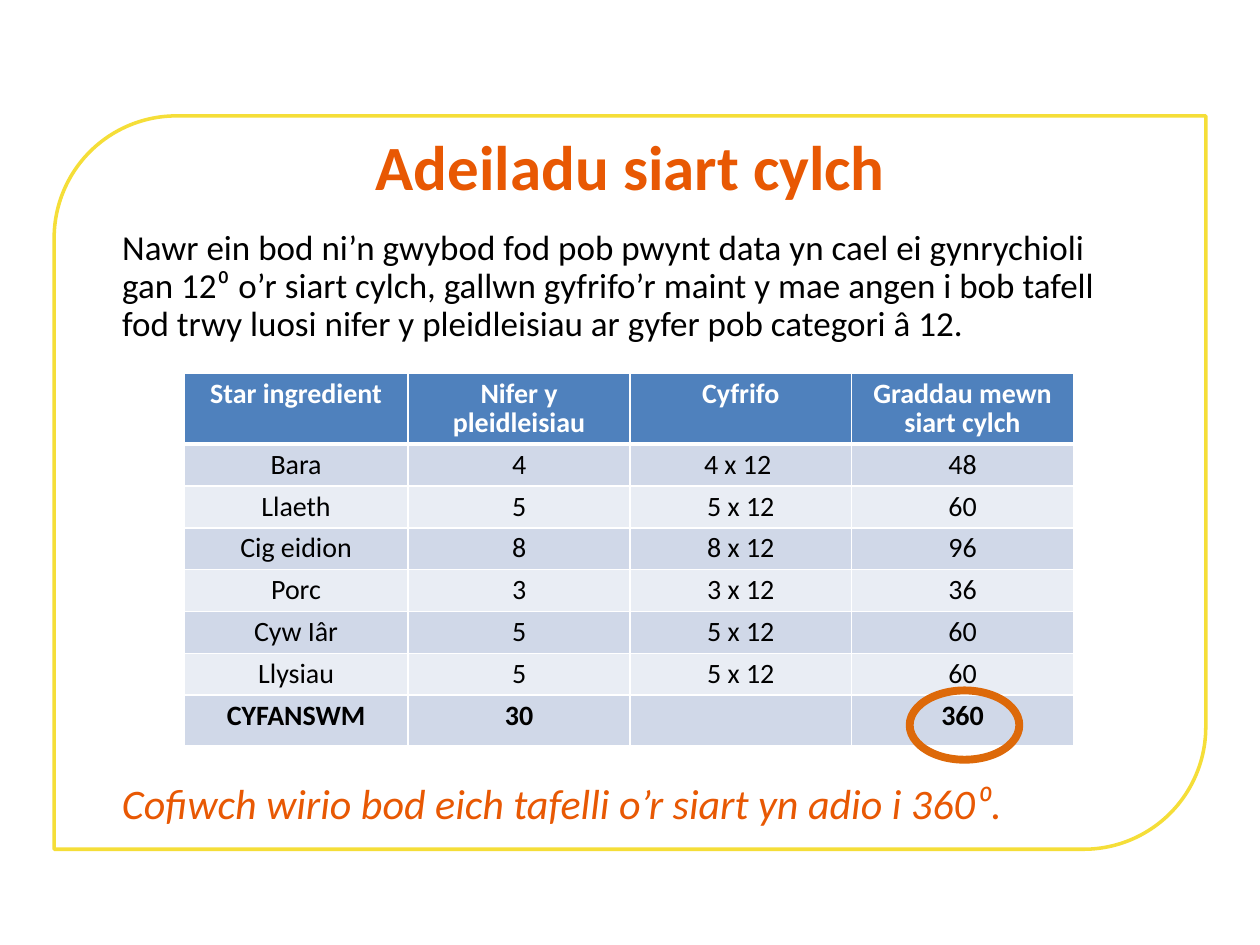
"""Build the Welsh lesson slide on constructing a pie chart."""
import pptx
import pptx.dml.color
import pptx.enum.shapes
import pptx.enum.text
import pptx.oxml
import pptx.oxml.ns
import pptx.util
from pptx.util import Inches

TITLE = "Adeiladu siart cylch"
EXPLANATION = (
    "Nawr ein bod ni’n gwybod fod pob pwynt data yn cael ei gynrychioli gan 12⁰ "
    "o’r siart cylch, gallwn gyfrifo’r maint y mae angen i bob tafell fod trwy "
    "luosi nifer y pleidleisiau ar gyfer pob categori â 12."
)
REMINDER = "Cofiwch wirio bod eich tafelli o’r siart yn adio i 360⁰."
VOTES = [
    ("Star ingredient", "Nifer y pleidleisiau", "Cyfrifo", "Graddau mewn siart cylch"),
    ("Bara", "4", "4 x 12 ", "48"),
    ("Llaeth", "5", "5 x 12", "60"),
    ("Cig eidion", "8", "8 x 12", "96"),
    ("Porc", "3", "3 x 12", "36"),
    ("Cyw Iâr", "5", "5 x 12", "60"),
    ("Llysiau", "5", "5 x 12", "60"),
    ("CYFANSWM", "30", "", "360"),
]
COLUMN_WIDTHS = [1.78, 1.76, 1.76, 1.76]
HEADER_HEIGHT, ROW_HEIGHT = 0.53, 0.31
ORANGE, BLACK, WHITE = "E85803", "000000", "FFFFFF"
HEADER_FILL, BAND_FILLS = "4F81BD", ("E9EDF4", "D0D8E8")
CENTER = pptx.enum.text.PP_ALIGN.CENTER
SHAPES = pptx.enum.shapes.MSO_SHAPE


def paint(color_format, value):
    color_format.rgb = pptx.dml.color.RGBColor.from_string(value)


def fill_solid(fill, value):
    fill.solid()
    paint(fill.fore_color, value)


def outline(shape, value, width):
    shape.shadow.inherit = False
    paint(shape.line.color, value)
    shape.line.width = pptx.util.Pt(width)


def place(shape, left, top, width, height):
    shape.left, shape.top = Inches(left), Inches(top)
    shape.width, shape.height = Inches(width), Inches(height)


def write(frame, text, size, color, bold=False, italic=False, align=None, spacing=None):
    frame.text = text
    paragraph = frame.paragraphs[0]
    paragraph.alignment = align
    paragraph.line_spacing = spacing
    paragraph.space_before = pptx.util.Pt(0)
    for run in paragraph.runs:
        run.font.name = "Calibri"
        run.font.size = pptx.util.Pt(size)
        run.font.bold, run.font.italic = bold, italic
        paint(run.font.color, color)


def set_borders(cell, bottom_width):
    properties = cell._tc.get_or_add_tcPr()
    for side, width in (("L", 1), ("R", 1), ("T", 1), ("B", bottom_width)):
        properties.append(pptx.oxml.parse_xml(
            f'<a:ln{side} {pptx.oxml.ns.nsdecls("a")} w="{pptx.util.Pt(width)}">'
            f'<a:solidFill><a:srgbClr val="{WHITE}"/></a:solidFill></a:ln{side}>'))


def add_votes_table(slide):
    height = HEADER_HEIGHT + ROW_HEIGHT * (len(VOTES) - 1)
    votes = slide.shapes.add_table(
        len(VOTES), len(COLUMN_WIDTHS), Inches(1.46), Inches(2.96),
        Inches(sum(COLUMN_WIDTHS)), Inches(height)).table
    for column, width in zip(votes.columns, COLUMN_WIDTHS):
        column.width = Inches(width)
    for r, entries in enumerate(VOTES):
        header, total = r == 0, r == len(VOTES) - 1
        votes.rows[r].height = Inches(HEADER_HEIGHT if header else ROW_HEIGHT)
        for c, entry in enumerate(entries):
            cell = votes.cell(r, c)
            write(cell.text_frame, entry, 16, WHITE if header else BLACK,
                  bold=header or total, align=CENTER, spacing=0.87)
            set_borders(cell, 3 if header or r == 0 else 1)
            fill_solid(cell.fill, HEADER_FILL if header else BAND_FILLS[r % 2])


def main():
    presentation = pptx.Presentation()
    presentation.slide_width, presentation.slide_height = Inches(10), Inches(7.5)
    slide = presentation.slides.add_slide(presentation.slide_layouts[1])

    frame = slide.shapes.add_shape(
        SHAPES.ROUND_2_DIAG_RECTANGLE,
        Inches(0.43), Inches(0.92), Inches(9.14), Inches(5.82))
    fill_solid(frame.fill, WHITE)
    outline(frame, "F5DE38", 2)
    slide.shapes._spTree.insert(2, frame._element)

    title = slide.shapes.title
    place(title, 1.46, 0.92, 7.09, 0.79)
    write(title.text_frame, TITLE, 36, ORANGE, bold=True, align=CENTER)
    title.text_frame.vertical_anchor = pptx.enum.text.MSO_ANCHOR.MIDDLE

    explanation = slide.placeholders[1]
    place(explanation, 0.87, 1.78, 8.27, 1.02)
    explanation.text_frame.auto_size = pptx.enum.text.MSO_AUTO_SIZE.NONE
    write(explanation.text_frame, EXPLANATION, 20, BLACK, spacing=0.9)
    bullet = explanation.text_frame.paragraphs[0]._p.get_or_add_pPr()
    bullet.set("marL", "0")
    bullet.set("indent", "0")
    bullet.append(pptx.oxml.parse_xml(f'<a:buNone {pptx.oxml.ns.nsdecls("a")}/>'))

    reminder = slide.shapes.add_textbox(
        Inches(0.87), Inches(6.17), Inches(8.27), Inches(0.49))
    reminder.text_frame.word_wrap = True
    write(reminder.text_frame, REMINDER, 24, ORANGE, italic=True, spacing=0.9)

    add_votes_table(slide)

    total_ring = slide.shapes.add_shape(
        SHAPES.OVAL, Inches(7.22), Inches(5.48), Inches(0.87), Inches(0.55))
    total_ring.fill.background()
    outline(total_ring, "DD6909", 4.5)

    presentation.save("out.pptx")


if __name__ == "__main__":
    main()
